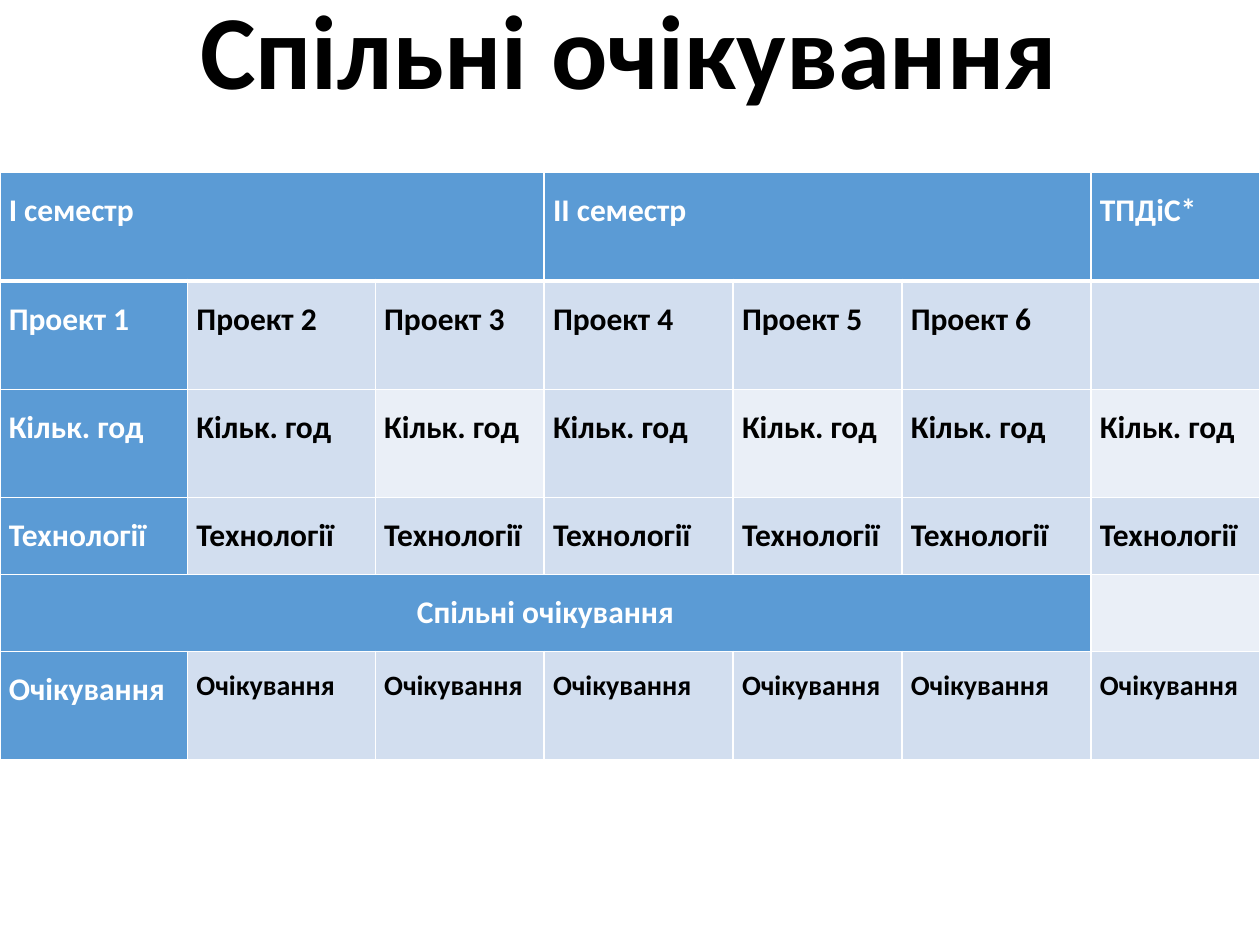
from lxml import etree
from pptx import Presentation
from pptx import util as u
from pptx.dml.color import RGBColor
from pptx.enum import text
from pptx.oxml.ns import qn

BLUE, PALE, LIGHT = "5B9BD5", "D2DEEF", "EAEFF7"
WHITE, BLACK = "FFFFFF", "000000"
LEFT, CENTER, JUSTIFY = (text.PP_ALIGN.LEFT, text.PP_ALIGN.CENTER,
                         text.PP_ALIGN.JUSTIFY)


def write(frame, words, size, color, align, spacing):
    paragraph = frame.paragraphs[0]
    paragraph.alignment = align
    paragraph.line_spacing = spacing
    run = paragraph.add_run()
    run.text = words
    run.font.name = "Calibri"
    run.font.size = u.Pt(size)
    run.font.bold = True
    run.font.color.rgb = RGBColor.from_string(color)


def add_border(cell, side, points):
    line = etree.SubElement(cell._tc.get_or_add_tcPr(), qn(f"a:ln{side}"),
                            w=str(u.Pt(points)))
    fill = etree.SubElement(line, qn("a:solidFill"))
    etree.SubElement(fill, qn("a:srgbClr"), val=WHITE)


presentation = Presentation()
presentation.slide_width = u.Inches(10)
presentation.slide_height = u.Inches(7.5)
slide = presentation.slides.add_slide(presentation.slide_layouts[6])

title = slide.shapes.add_textbox(u.Inches(0.68), 0, u.Inches(8.62), u.Inches(0.88))
title.text_frame.word_wrap = True
title.text_frame.vertical_anchor = text.MSO_ANCHOR.MIDDLE
write(title.text_frame, "Спільні очікування", 60, BLACK, CENTER, 0.9)

column_widths = [1.49, 1.49, 1.34, 1.5, 1.34, 1.5, 1.34]
row_heights = [0.86, 0.86, 0.86, 0.61, 0.61, 0.86]
columns = len(column_widths)
HEADER, PROJECTS, HOURS, TECHNOLOGIES, SHARED, EXPECTATIONS = range(len(row_heights))
rows = [
    ["І семестр", "", "", "ІІ семестр", "", "", "ТПДіС*"],
    [f"Проект {number}" for number in range(1, columns)] + [""],
    ["Кільк. год"] * columns,
    ["Технології"] * columns,
    ["Спільні очікування"] + [""] * (columns - 1),
    ["Очікування"] * columns,
]

table = slide.shapes.add_table(len(rows), columns, 0, u.Inches(1.37), u.Inches(10),
                               u.Inches(sum(row_heights))).table
for column, width in zip(table.columns, column_widths):
    column.width = u.Inches(width)
for row, height in zip(table.rows, row_heights):
    row.height = u.Inches(height)

for r, row in enumerate(rows):
    for c, words in enumerate(row):
        cell = table.cell(r, c)
        cell.margin_left = cell.margin_right = u.Inches(0.07)
        cell.margin_top = cell.margin_bottom = 0
        for side in "LRTB":
            under_header = (r, side) in ((HEADER, "B"), (PROJECTS, "T"))
            add_border(cell, side, 3 if under_header else 1)

        heading = r == HEADER or c == 0 or (r == SHARED and c < columns - 1)
        light = r == SHARED or (r == HOURS and c % 2 == 0)
        cell.fill.solid()
        cell.fill.fore_color.rgb = RGBColor.from_string(
            BLUE if heading else LIGHT if light else PALE)

        if words:
            last_expectation = r == EXPECTATIONS and c == columns - 1
            justified = heading or r == TECHNOLOGIES or last_expectation
            align = CENTER if r == SHARED else JUSTIFY if justified else LEFT
            size = 16 if r == EXPECTATIONS and not heading else 18
            write(cell.text_frame, words, size, WHITE if heading else BLACK, align, 1.5)

for r, first, last in [(HEADER, 0, 2), (HEADER, 3, 5), (SHARED, 0, 5)]:
    table.cell(r, first).merge(table.cell(r, last))

presentation.save("out.pptx")
